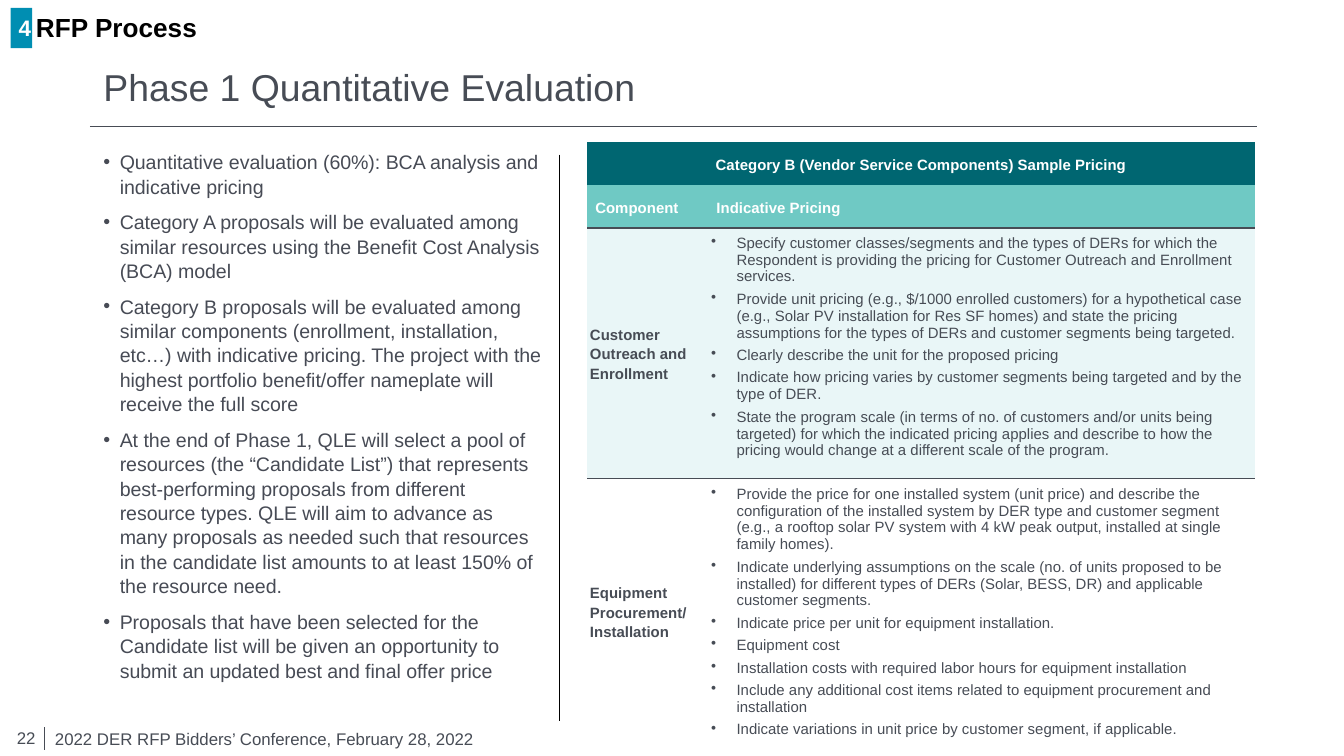
"""Build the Phase 1 quantitative evaluation slide."""
from lxml import etree
from pptx import Presentation
from pptx.dml.color import RGBColor
from pptx.enum import shapes, text
from pptx.oxml import ns
from pptx.util import Cm, Pt

COLORS = {
    "slate": "474C55", "body": "474B55", "white": "FFFFFF", "black": "000000",
    "header": "006671", "subheader": "6FC9C4", "band": "E9F6F7", "tab": "008EB2",
}
EVALUATION_POINTS = [
    "Quantitative evaluation (60%): BCA analysis and indicative pricing",
    "Category A proposals will be evaluated among similar resources using the "
    "Benefit Cost Analysis (BCA) model",
    "Category B proposals will be evaluated among similar components (enrollment, "
    "installation, etc…) with indicative pricing. The project with the highest "
    "portfolio benefit/offer nameplate will receive the full score",
    "At the end of Phase 1, QLE will select a pool of resources (the “Candidate "
    "List”) that represents best-performing proposals from different resource "
    "types. QLE will aim to advance as many proposals as needed such that resources "
    "in the candidate list amounts to at least 150% of the resource need.",
    "Proposals that have been selected for the Candidate list will be given an "
    "opportunity to submit an updated best and final offer price",
]
COMPONENTS = [
    ("Customer Outreach and Enrollment", "band", [
        "Specify customer classes/segments and the types of DERs for which the "
        "Respondent is providing the pricing for Customer Outreach and Enrollment "
        "services.",
        "Provide unit pricing (e.g., $/1000 enrolled customers) for a hypothetical "
        "case (e.g., Solar PV installation for Res SF homes) and state the pricing "
        "assumptions for the types of DERs and customer segments being targeted.",
        "Clearly describe the unit for the proposed pricing",
        "Indicate how pricing varies by customer segments being targeted and by the "
        "type of DER.",
        "State the program scale (in terms of no. of customers and/or units being "
        "targeted) for which the indicated pricing applies and describe to how the "
        "pricing would change at a different scale of the program.",
    ]),
    ("Equipment Procurement/ Installation", "white", [
        "Provide the price for one installed system (unit price) and describe the "
        "configuration of the installed system by DER type and customer segment "
        "(e.g., a rooftop solar PV system with 4 kW peak output, installed at single "
        "family homes).",
        "Indicate underlying assumptions on the scale (no. of units proposed to be "
        "installed) for different types of DERs (Solar, BESS, DR) and applicable "
        "customer segments.",
        "Indicate price per unit for equipment installation.",
        "Equipment cost",
        "Installation costs with required labor hours for equipment installation",
        "Include any additional cost items related to equipment procurement and "
        "installation",
        "Indicate variations in unit price by customer segment, if applicable.",
    ]),
]
NO_STYLE = "{2D5ABB26-0587-4C30-8999-92F81FD0307C}"


def rgb(name):
    """Return the named colour."""
    return RGBColor.from_string(COLORS[name])


def place(shape, left, top, width, height):
    """Move and size a shape in centimetres."""
    shape.left, shape.top = Cm(left), Cm(top)
    shape.width, shape.height = Cm(width), Cm(height)


def write(frame, lines, size, color, bold=False, align=text.PP_ALIGN.LEFT,
          indent=None, before=0, after=0, spacing=1.0):
    """Fill a text frame with evenly formatted paragraphs."""
    frame.word_wrap = True
    for index, line in enumerate(lines):
        para = frame.add_paragraph() if index else frame.paragraphs[0]
        para.text = line
        para.alignment = align
        para.line_spacing = spacing
        para.space_before = Pt(before if index else 0)
        para.space_after = Pt(after)
        if indent:
            props = para._p.get_or_add_pPr()
            props.set("marL", str(Cm(indent)))
            props.set("indent", str(-Cm(indent)))
            etree.SubElement(props, ns.qn("a:buChar")).set("char", "•")
        font = para.font
        font.name, font.size, font.bold = "Arial", Pt(size), bold
        font.color.rgb = rgb(color)


def add_label(parent, bounds, line, size, color, **style):
    """Add a vertically centred text box."""
    box = parent.add_textbox(*map(Cm, bounds))
    box.text_frame.vertical_anchor = text.MSO_ANCHOR.MIDDLE
    write(box.text_frame, [line], size, color, **style)


def add_rule(page, ends, color, weight):
    """Add a straight line without a shadow."""
    rule = page.shapes.add_connector(shapes.MSO_CONNECTOR.STRAIGHT, *map(Cm, ends))
    rule.line.color.rgb = rgb(color)
    rule.line.width = Pt(weight)
    etree.SubElement(rule._element.spPr, ns.qn("a:effectLst"))


def fill_placeholder(shape, bounds, anchor, lines, size, color, **style):
    """Position a template placeholder and write its text."""
    place(shape, *bounds)
    shape.text_frame.auto_size = text.MSO_AUTO_SIZE.NONE
    shape.text_frame.vertical_anchor = anchor
    write(shape.text_frame, lines, size, color, **style)


def fill_cell(cell, fill, margins, lines, color, **style):
    """Colour a table cell and write its text."""
    cell.fill.solid()
    cell.fill.fore_color.rgb = rgb(fill)
    cell.vertical_anchor = text.MSO_ANCHOR.MIDDLE
    (cell.margin_left, cell.margin_top,
     cell.margin_right, cell.margin_bottom) = map(Cm, margins)
    write(cell.text_frame, lines, 8, color, **style)


def add_border(cell, side, color):
    """Draw a one-point border on one side of a cell."""
    border = etree.Element(ns.qn(f"a:{side}"), w=str(Pt(1)))
    fill = etree.SubElement(border, ns.qn("a:solidFill"))
    etree.SubElement(fill, ns.qn("a:srgbClr")).set("val", COLORS[color])
    cell._tc.get_or_add_tcPr().insert(0, border)


def add_pricing_table(page):
    """Add the sample pricing table."""
    frame = page.shapes.add_table(4, 2, Cm(11.1), Cm(2.69), Cm(12.62), Cm(11.25))
    table = frame.table
    table.first_row = table.horz_banding = False
    table._tbl.tblPr.find(ns.qn("a:tableStyleId")).text = NO_STYLE
    for column, width in zip(table.columns, (2.29, 10.33)):
        column.width = Cm(width)
    for row, height in zip(table.rows, (0.81, 0.81, 4.32, 4.8)):
        row.height = Cm(height)

    heading = {"bold": True, "spacing": 1.15, "after": 3}
    padding = (0.15, 0.2, 0.15, 0.2)
    table.cell(0, 0).merge(table.cell(0, 1))
    fill_cell(table.cell(0, 0), "header", padding,
              ["Category B (Vendor Service Components) Sample Pricing"], "white",
              align=text.PP_ALIGN.CENTER, **heading)
    for column, title in enumerate(("Component", "Indicative Pricing")):
        fill_cell(table.cell(1, column), "subheader", padding, [title], "white", **heading)
        add_border(table.cell(1, column), "lnB", "slate")
        add_border(table.cell(2, column), "lnT", "slate")
    for row, (name, fill, points) in enumerate(COMPONENTS, 2):
        fill_cell(table.cell(row, 0), fill, (0.05, 0, 0.05, 0), [name], "slate",
                  bold=True, spacing=1.15)
        bottom = 0.25 if row == 2 else 0
        fill_cell(table.cell(row, 1), fill, (0.05, 0, 0.05, bottom), points, "slate",
                  indent=0.48, before=3)


def add_section_tab(page):
    """Add the numbered section marker and its name."""
    group = page.shapes.add_group_shape().shapes
    tab = group.add_shape(shapes.MSO_SHAPE.RECTANGLE, Cm(0.2), Cm(0.15), Cm(0.41), Cm(0.76))
    tab.shadow.inherit = False
    tab.fill.solid()
    tab.fill.fore_color.rgb = rgb("tab")
    tab.line.fill.background()
    frame = tab.text_frame
    frame.margin_left, frame.margin_right = Cm(0.13), 0
    frame.vertical_anchor = text.MSO_ANCHOR.MIDDLE
    write(frame, ["4"], 12, "white", bold=True, align=text.PP_ALIGN.CENTER)
    add_label(group, (0.43, 0.2, 6.78, 0.61), "RFP Process", 14, "black", bold=True)


def main():
    """Build and save the deck."""
    deck = Presentation()
    deck.slide_width, deck.slide_height = Cm(25.4), Cm(14.28)
    page = deck.slides.add_slide(deck.slide_layouts[1])
    add_rule(page, (1.7, 2.39, 23.75, 2.39), "slate", 0.75)
    add_label(page.shapes, (-0.15, 13.51, 1.07, 0.86), "22", 9, "slate",
              align=text.PP_ALIGN.RIGHT)
    add_rule(page, (0.84, 13.74, 0.84, 14.17), "slate", 0.75)
    add_label(page.shapes, (0.79, 13.64, 12.29, 0.64),
              "2022 DER RFP Bidders’ Conference, February 28, 2022", 9, "slate")
    fill_placeholder(page.shapes.title, (1.7, 0.89, 22.07, 1.5), text.MSO_ANCHOR.MIDDLE,
                     ["Phase 1 Quantitative Evaluation"], 20, "slate")
    fill_placeholder(page.placeholders[1], (1.7, 2.69, 8.86, 10.11), text.MSO_ANCHOR.TOP,
                     EVALUATION_POINTS, 10.5, "body", indent=0.31, after=6, spacing=1.04)
    add_rule(page, (10.57, 2.92, 10.57, 13.61), "black", 0.5)
    add_pricing_table(page)
    add_section_tab(page)
    deck.save("out.pptx")


if __name__ == "__main__":
    main()
